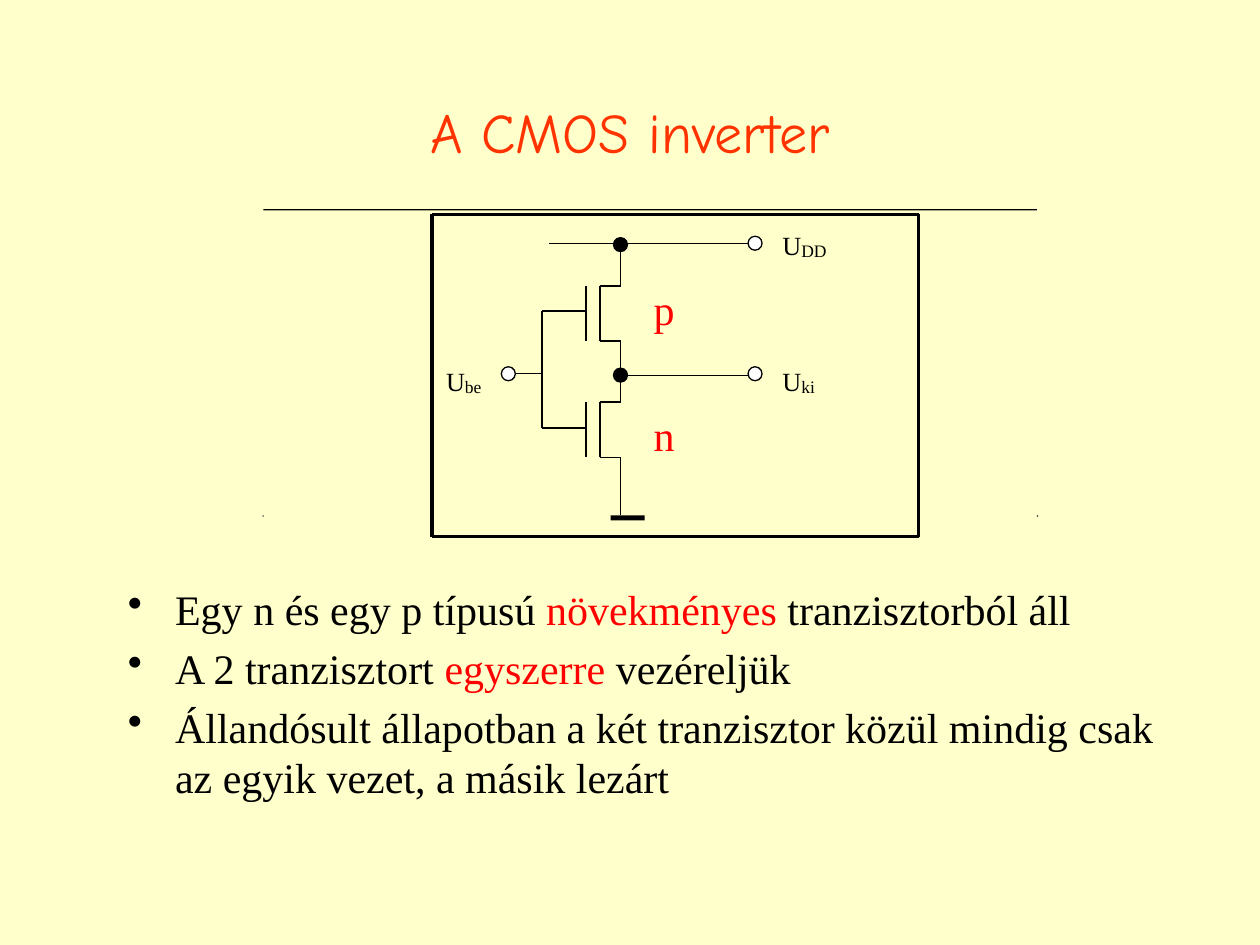
"""Build the CMOS inverter slide: title, circuit diagram and three bullets."""
from lxml.etree import SubElement
from pptx import Presentation
from pptx.dml.color import RGBColor
from pptx.enum.shapes import MSO_CONNECTOR, MSO_SHAPE
from pptx.enum.text import MSO_ANCHOR, PP_ALIGN
from pptx.oxml.ns import qn
from pptx.util import Pt

CREAM = RGBColor(0xFF, 0xFF, 0xCC)
ORANGE = RGBColor(0xFF, 0x33, 0x00)
RED = RGBColor(0xFF, 0x00, 0x00)
BLACK = RGBColor(0, 0, 0)
WHITE = RGBColor(0xFF, 0xFF, 0xFF)
SERIF = "Times New Roman"

TITLE = "A CMOS inverter"
BULLETS = [
    [("Egy n és egy p típusú ", BLACK), ("növekményes", RED), (" tranzisztorból áll", BLACK)],
    [("A 2 tranzisztort ", BLACK), ("egyszerre ", RED), ("vezéreljük", BLACK)],
    [("Állandósult állapotban a két tranzisztor közül mindig csak "
      "az egyik vezet, a másik lezárt", BLACK)],
]

INPUT_X, GATE_X, PLATE_X, CHANNEL_X, DRAIN_X, OUTPUT_X = 290.5, 309.7, 334.8, 342.8, 354.6, 431.5
SUPPLY_Y, MIDDLE_Y, GROUND_Y = 139, 214, 294.5
CHANNEL_HEIGHT, GATE_DROP = 31.5, 14.6
TRANSISTORS = [("p", 163.3, 158.4), ("n", 229.9, 230.4)]
TERMINAL_LABELS = [
    ("be", 254.9, 208.8, 9.4),
    ("ki", 447.1, 208.8, 7.9),
    ("DD", 447.1, 131, 14.4),
]
TERMINALS = [(INPUT_X, MIDDLE_Y - 0.4), (OUTPUT_X, MIDDLE_Y - 0.4), (OUTPUT_X, SUPPLY_Y)]
NODES = [(DRAIN_X, SUPPLY_Y + 0.8), (DRAIN_X, MIDDLE_Y + 0.4)]
DOT = 8
FRAME = (247, 122.5, 525, 306.7)
BARS = [
    (150.5, 119.5, 442, 0.7),
    (150, 294.5, 0.7, 0.7),
    (592.5, 294.5, 0.7, 0.7),
    (247, 122.5, 0.7, 175),
    (349, GROUND_Y, 19.4, 2.9),
]


def add_span(para, text, **formats):
    span = para.add_run()
    span.text = text
    span.font.color.rgb = formats.pop("color", BLACK)
    for name, value in formats.items():
        setattr(span.font, name, value)


def add_text_frame(page, left, top, width, height, **formats):
    box = page.shapes.add_textbox(Pt(left), Pt(top), Pt(width), Pt(height))
    for name, value in ({"word_wrap": True} | formats).items():
        setattr(box.text_frame, name, value)
    return box.text_frame


def add_wire(page, left, top, right, bottom, width=1.0):
    wire = page.shapes.add_connector(
        MSO_CONNECTOR.STRAIGHT, Pt(left), Pt(top), Pt(right), Pt(bottom))
    wire.line.color.rgb = BLACK
    wire.line.width = Pt(width)
    SubElement(wire.element.spPr, qn("a:effectLst"))


def add_solid(page, kind, left, top, width, height, fill=BLACK, outline=None):
    solid = page.shapes.add_shape(kind, Pt(left), Pt(top), Pt(width), Pt(height))
    solid.shadow.inherit = False
    solid.fill.solid()
    solid.fill.fore_color.rgb = fill
    if outline is None:
        solid.line.fill.background()
    else:
        solid.line.color.rgb = BLACK
        solid.line.width = Pt(outline)


def add_title(page):
    frame = add_text_frame(page, 54, 48, 612, 90, vertical_anchor=MSO_ANCHOR.MIDDLE,
                           margin_bottom=Pt(40))
    para = frame.paragraphs[0]
    para.alignment = PP_ALIGN.CENTER
    add_span(para, TITLE, name="Comic Neue", size=Pt(32), color=ORANGE)


def add_bullets(page):
    frame = add_text_frame(page, 66, 330, 612, 174)
    for index, spans in enumerate(BULLETS):
        para = frame.add_paragraph() if index else frame.paragraphs[0]
        para.space_before = Pt(4.8)
        properties = para._p.get_or_add_pPr()
        properties.set("marL", str(Pt(27)))
        properties.set("indent", str(Pt(-27)))
        SubElement(properties, qn("a:buChar")).set("char", "•")
        for text, color in spans:
            add_span(para, text, name=SERIF, size=Pt(24), color=color)


def add_transistor(page, name, top, label_top):
    bottom = top + CHANNEL_HEIGHT
    gate_y = top + GATE_DROP
    add_wire(page, PLATE_X, top, PLATE_X, bottom)
    add_wire(page, CHANNEL_X, top, CHANNEL_X, bottom)
    for end in (top, bottom):
        add_wire(page, CHANNEL_X, end, DRAIN_X, end)
    add_wire(page, GATE_X, gate_y, PLATE_X, gate_y)
    frame = add_text_frame(page, 366.5, label_top, 30, 36)
    add_span(frame.paragraphs[0], name, name=SERIF, size=Pt(24), color=RED)


def add_terminal_label(page, subscript, left, top, width):
    parts = [("U", left, top, 10.8, 18, 15), (subscript, left + 10.8, top + 6.2, width, 12.2, 10)]
    margins = {f"margin_{side}": 0 for side in ("left", "top", "right", "bottom")}
    for text, part_left, part_top, part_width, height, size in parts:
        frame = add_text_frame(page, part_left, part_top, part_width, height,
                               word_wrap=False, **margins)
        add_span(frame.paragraphs[0], text, name=SERIF, size=Pt(size))


def add_circuit(page):
    for bar in BARS:
        add_solid(page, MSO_SHAPE.RECTANGLE, *bar)
    for transistor in TRANSISTORS:
        add_transistor(page, *transistor)
    tops = [top for _, top, _ in TRANSISTORS]
    stops = [SUPPLY_Y, tops[0], tops[0] + CHANNEL_HEIGHT, MIDDLE_Y,
             MIDDLE_Y, tops[1], tops[1] + CHANNEL_HEIGHT, GROUND_Y]
    for start, end in zip(stops[::2], stops[1::2]):
        add_wire(page, DRAIN_X, start, DRAIN_X, end)
    add_wire(page, GATE_X, tops[0] + GATE_DROP, GATE_X, tops[1] + GATE_DROP, 0.75)
    for start, end, height in [(313.9, OUTPUT_X, SUPPLY_Y),
                               (DRAIN_X, OUTPUT_X, MIDDLE_Y + 0.4),
                               (INPUT_X, GATE_X, MIDDLE_Y - 0.4)]:
        add_wire(page, start, height, end, height, 0.75)
    for centers, fill in ((TERMINALS, WHITE), (NODES, BLACK)):
        for center_x, center_y in centers:
            add_solid(page, MSO_SHAPE.OVAL, center_x - DOT / 2, center_y - DOT / 2,
                      DOT, DOT, fill, 0.75)
    for label in TERMINAL_LABELS:
        add_terminal_label(page, *label)
    left, top, right, bottom = FRAME
    for height in (top, bottom):
        add_wire(page, left, height, right, height, 0)
    for side in (left, right):
        add_wire(page, side, top, side, bottom, 0)


def main():
    deck = Presentation()
    deck.slide_width, deck.slide_height = Pt(720), Pt(540)
    page = deck.slides.add_slide(deck.slide_layouts[6])
    page.background.fill.solid()
    page.background.fill.fore_color.rgb = CREAM
    add_title(page)
    add_bullets(page)
    add_circuit(page)
    deck.save("out.pptx")


if __name__ == "__main__":
    main()
